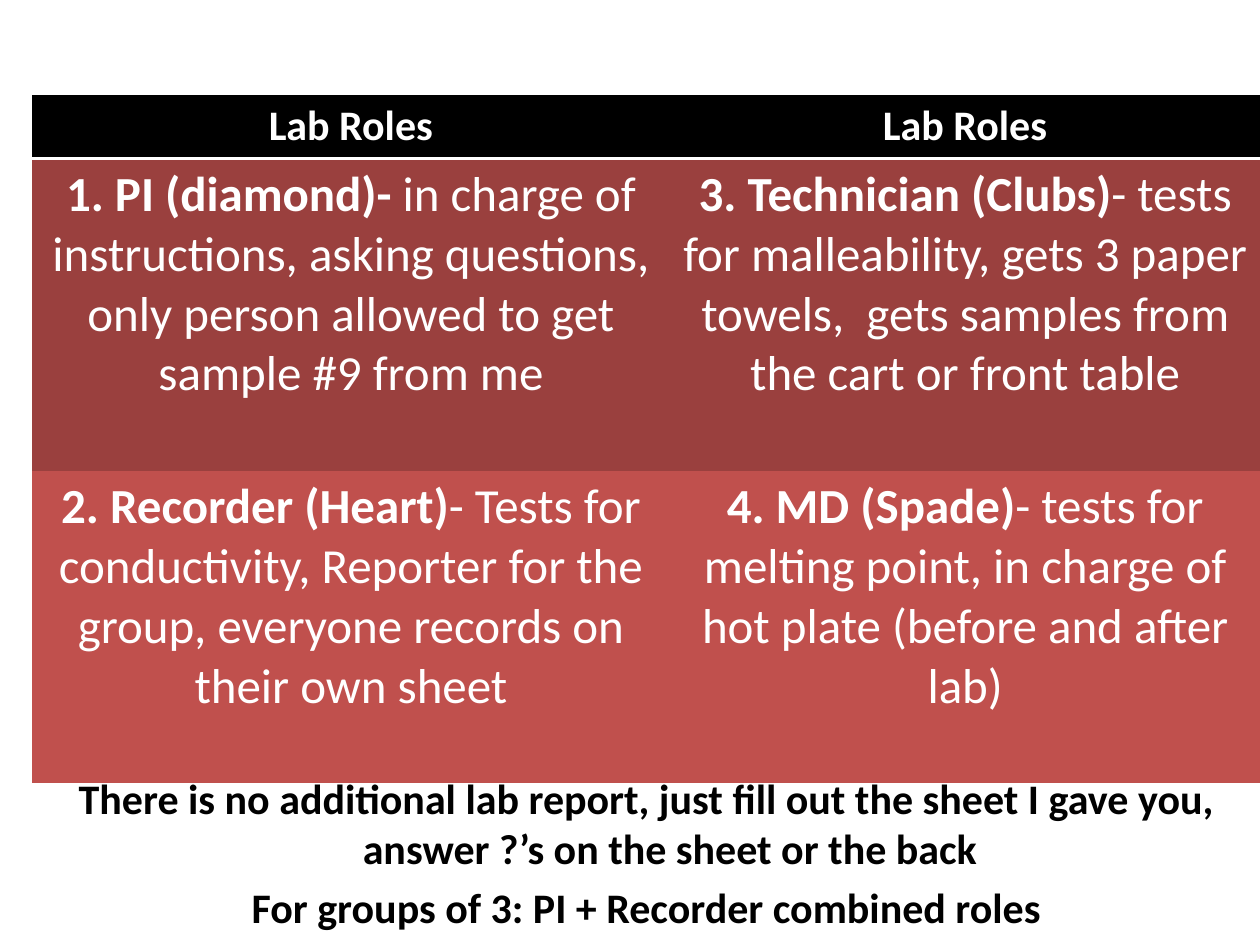
from lxml.etree import SubElement
from pptx import Presentation
from pptx.dml.color import RGBColor
from pptx.enum.text import MSO_AUTO_SIZE, PP_ALIGN
from pptx.oxml import parse_xml
from pptx.oxml.ns import nsdecls, qn
from pptx.util import Inches, Pt

BLACK = RGBColor(0x00, 0x00, 0x00)
WHITE = RGBColor(0xFF, 0xFF, 0xFF)
DARK_RED = RGBColor(0x9A, 0x40, 0x3E)
RED = RGBColor(0xC0, 0x50, 0x4D)
FONT = "Calibri"
NO_STYLE = "{2D5ABB26-0587-4C30-8999-92F81FD0307C}"

COLUMN_SHARES = (0.52, 0.48)
ROW_SHARES = (0.09, 0.455, 0.455)
ROW_FILLS = (BLACK, DARK_RED, RED)
HEADER = ("Lab Roles", "")
ROLES = (
    (HEADER, HEADER),
    (
        ("1. PI (diamond)-", " in charge of instructions, asking questions, "
         "only person allowed to get sample #9 from me"),
        ("3. Technician (Clubs)", "- tests for malleability, gets 3 paper towels,  "
         "gets samples from the cart or front table"),
    ),
    (
        ("2. Recorder (Heart)", "- Tests for conductivity, Reporter for the group, "
         "everyone records on their own sheet"),
        ("4. MD (Spade)", "- tests for melting point, in charge of hot plate "
         "(before and after lab)"),
    ),
)
NOTES = (
    "There is no additional lab report, just fill out the sheet I gave you, "
    "answer ?’s on the sheet or the back",
    "For groups of 3: PI + Recorder combined roles",
)


def style_run(run, size, color, bold):
    """Set the font of one run."""
    run.font.name = FONT
    run.font.size = Pt(size)
    run.font.bold = bold
    run.font.color.rgb = color


def fill_cell(cell, role, duty, size, color):
    """Write a bold role and its plain duty into a filled cell."""
    cell.fill.solid()
    cell.fill.fore_color.rgb = color
    paragraph = cell.text_frame.paragraphs[0]
    paragraph.alignment = PP_ALIGN.CENTER
    for text, bold in ((role, True), (duty, False)):
        if text:
            run = paragraph.add_run()
            run.text = text
            style_run(run, size, WHITE, bold)


def underline_cell(cell):
    """Give a cell a white bottom border."""
    border = parse_xml(
        f'<a:lnB {nsdecls("a")} w="{Pt(2)}"><a:solidFill>'
        f'<a:srgbClr val="{WHITE}"/></a:solidFill></a:lnB>'
    )
    cell._tc.get_or_add_tcPr().insert(0, border)


def add_roles_table(slide, left, top, width, height):
    """Place the table of lab roles in the given box."""
    table = slide.shapes.add_table(
        len(ROW_SHARES), len(COLUMN_SHARES), left, top, width, height
    ).table
    table._tbl.tblPr.find(qn("a:tableStyleId")).text = NO_STYLE
    for column, share in zip(table.columns, COLUMN_SHARES):
        column.width = int(width * share)
    for row, share, color, roles in zip(table.rows, ROW_SHARES, ROW_FILLS, ROLES):
        row.height = int(height * share)
        for cell, (role, duty) in zip(row.cells, roles):
            fill_cell(cell, role, duty, 28 if duty else 24, color)
    for cell in table.rows[0].cells:
        underline_cell(cell)


def place_notes(placeholder, left, top, width, height):
    """Move the body placeholder to the given box and write the notes."""
    placeholder.left, placeholder.top = left, top
    placeholder.width, placeholder.height = width, height
    text_frame = placeholder.text_frame
    text_frame.text = "\n".join(NOTES)
    text_frame.auto_size = MSO_AUTO_SIZE.NONE
    for paragraph in text_frame.paragraphs:
        paragraph.alignment = PP_ALIGN.CENTER
        SubElement(paragraph._p.get_or_add_pPr(), qn("a:buNone"))
        style_run(paragraph.runs[0], 24, BLACK, True)


def main():
    """Build the lab roles slide and save it."""
    presentation = Presentation()
    presentation.slide_width = Inches(10)
    presentation.slide_height = Inches(7.5)
    slide = presentation.slides.add_slide(presentation.slide_layouts[1])
    title = slide.shapes.title.element
    title.getparent().remove(title)
    place_notes(slide.placeholders[1], Inches(0.42), Inches(6.08), Inches(9.42), Inches(1.42))
    add_roles_table(slide, Inches(0.25), Inches(0.75), Inches(9.75), Inches(5.45))
    presentation.save("out.pptx")


if __name__ == "__main__":
    main()
